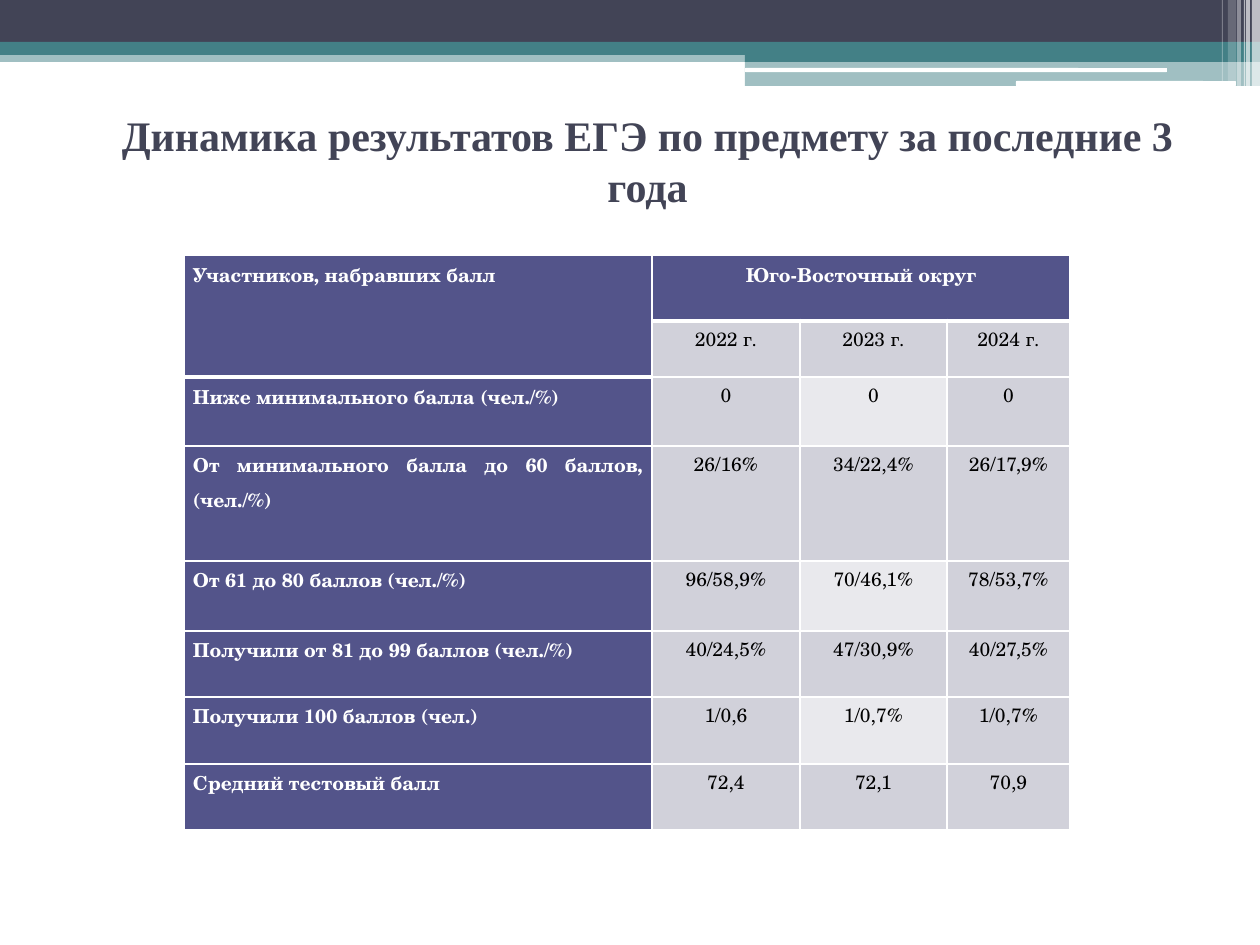
from lxml import etree
from pptx import Presentation
from pptx import util as u
from pptx.dml.color import RGBColor
from pptx.enum import shapes, text
from pptx.oxml import ns

WHITE = RGBColor(0xFF, 0xFF, 0xFF)
BLACK = RGBColor(0, 0, 0)
INK = RGBColor(0x42, 0x44, 0x56)
TEAL = RGBColor(0x43, 0x80, 0x86)
HEAD = RGBColor(0x53, 0x54, 0x8A)
GREY = RGBColor(0xD1, 0xD1, 0xDA)
PALE = RGBColor(0xE9, 0xE9, 0xED)
SCALE = 914400 // 126
RECT = shapes.MSO_SHAPE.RECTANGLE
ROUND = shapes.MSO_SHAPE.ROUNDED_RECTANGLE
ALIGN = text.PP_ALIGN

BARS = [
    (RECT, 0, 50, 1260, 12, TEAL, 50),
    (RECT, 0, 0, 1260, 43, INK, 100),
    (RECT, 0, 42, 1260, 13, TEAL, 100),
    (RECT, 745, 49, 515, 13, TEAL, 100),
    (RECT, 745, 61, 515, 25, TEAL, 50),
    (ROUND, 745, 68, 422, 4, WHITE, 100),
    (ROUND, 1016, 81, 220, 5, WHITE, 100),
]
STRIPES = [(1252, 8, 86, 65), (1246, 4, 86, 65), (1244, 1, 86, 60),
           (1237, 4, 86, 40), (1228, 8, 81, 20), (1222, 1, 81, 30)]
COLS = [468, 148, 147, 123]
ROWS = [66, 56, 69, 115, 70, 66, 67, 66]
DATA = [
    ["Участников, набравших балл", "Юго-Восточный округ", "", ""],
    ["", "2022 г.", "2023 г.", "2024 г."],
    ["Ниже минимального балла (чел./%)", "0", "0", "0"],
    ["От минимального балла до 60 баллов, (чел./%)", "26/16%", "34/22,4%", "26/17,9%"],
    ["От 61 до 80 баллов (чел./%)", "96/58,9%", "70/46,1%", "78/53,7%"],
    ["Получили от 81 до 99 баллов (чел./%)", "40/24,5%", "47/30,9%", "40/27,5%"],
    ["Получили 100 баллов (чел.)", "1/0,6", "1/0,7%", "1/0,7%"],
    ["Средний тестовый балл", "72,4", "72,1", "70,9"],
]


def px(n):
    return u.Emu(n * SCALE)


class Deck:
    """Holds the fonts and the current slide, and adds elements to it."""

    serif = "Times New Roman"
    book = "TeX Gyre Schola"

    def __init__(self):
        self.prs = Presentation()
        self.prs.slide_width, self.prs.slide_height = u.Inches(10), u.Inches(7.5)
        self.slide = self.prs.slides.add_slide(self.prs.slide_layouts[5])

    def style(self, para, name, size, color, bold, align):
        para.alignment = align
        font = para.font
        font.name, font.size, font.bold = name, u.Pt(size), bold
        font.color.rgb = color

    def bar(self, kind, x, y, w, h, color, alpha):
        bar = self.slide.shapes.add_shape(kind, px(x), px(y), px(w), px(h))
        bar.shadow.inherit = False
        bar.line.fill.background()
        bar.fill.solid()
        bar.fill.fore_color.rgb = color
        if alpha < 100:
            tint = bar.fill._xPr.find(".//" + ns.qn("a:srgbClr"))
            etree.SubElement(tint, ns.qn("a:alpha"), val=str(alpha * 1000))

    def title(self, words, x, y, w, h, drop):
        box = self.slide.shapes.title
        box.left, box.top, box.width, box.height = map(px, (x, y, w, h))
        frame = box.text_frame
        frame.text = words
        frame.word_wrap = True
        frame.auto_size = text.MSO_AUTO_SIZE.NONE
        frame.vertical_anchor = text.MSO_ANCHOR.MIDDLE
        frame.margin_top, frame.margin_bottom = px(drop), 0
        self.style(frame.paragraphs[0], self.serif, 24, INK, True, ALIGN.CENTER)

    def edge(self, cell, side, width):
        line = etree.SubElement(cell._tc.get_or_add_tcPr(), ns.qn("a:ln" + side),
                                w=str(u.Pt(width)))
        fill = etree.SubElement(line, ns.qn("a:solidFill"))
        etree.SubElement(fill, ns.qn("a:srgbClr"), val=str(WHITE))

    def cell(self, cell, words, row, col):
        head = col == 0 or row == 0
        last = 1 if col == 0 else 0
        for side in "LRTB":
            thick = side == "B" and row <= last or side == "T" and row == last + 1
            self.edge(cell, side, 3 if thick else 1)
        pale = col == 2 and row > 0 and row % 2 == 0 and row < len(DATA) - 1
        cell.fill.solid()
        cell.fill.fore_color.rgb = HEAD if head else PALE if pale else GREY
        cell.margin_left = cell.margin_right = px(9)
        cell.margin_top = cell.margin_bottom = 0
        if words:
            cell.text = words
        para = cell.text_frame.paragraphs[0]
        para.line_spacing = 1.15
        self.style(para, self.book, 11, WHITE if head else BLACK, head,
                   ALIGN.CENTER if col else ALIGN.JUSTIFY)

    def table(self, x, y):
        grid = self.slide.shapes.add_table(
            len(ROWS), len(COLS), px(x), px(y), px(sum(COLS)), px(sum(ROWS))).table
        for col, wide in zip(grid.columns, COLS):
            col.width = px(wide)
        for row, high in zip(grid.rows, ROWS):
            row.height = px(high)
        for r, line in enumerate(DATA):
            for c, words in enumerate(line):
                self.cell(grid.cell(r, c), words, r, c)
        grid.cell(0, 0).merge(grid.cell(1, 0))
        grid.cell(0, 1).merge(grid.cell(0, 3))


def main():
    deck = Deck()
    for bar in BARS:
        deck.bar(*bar)
    for x, wide, high, alpha in STRIPES:
        deck.bar(RECT, x, 0, wide, high, WHITE, alpha)
    deck.title("Динамика результатов ЕГЭ по предмету за последние 3 года",
               105, 86, 1085, 98, 50)
    deck.table(184, 255)
    deck.prs.save("out.pptx")


if __name__ == "__main__":
    main()
